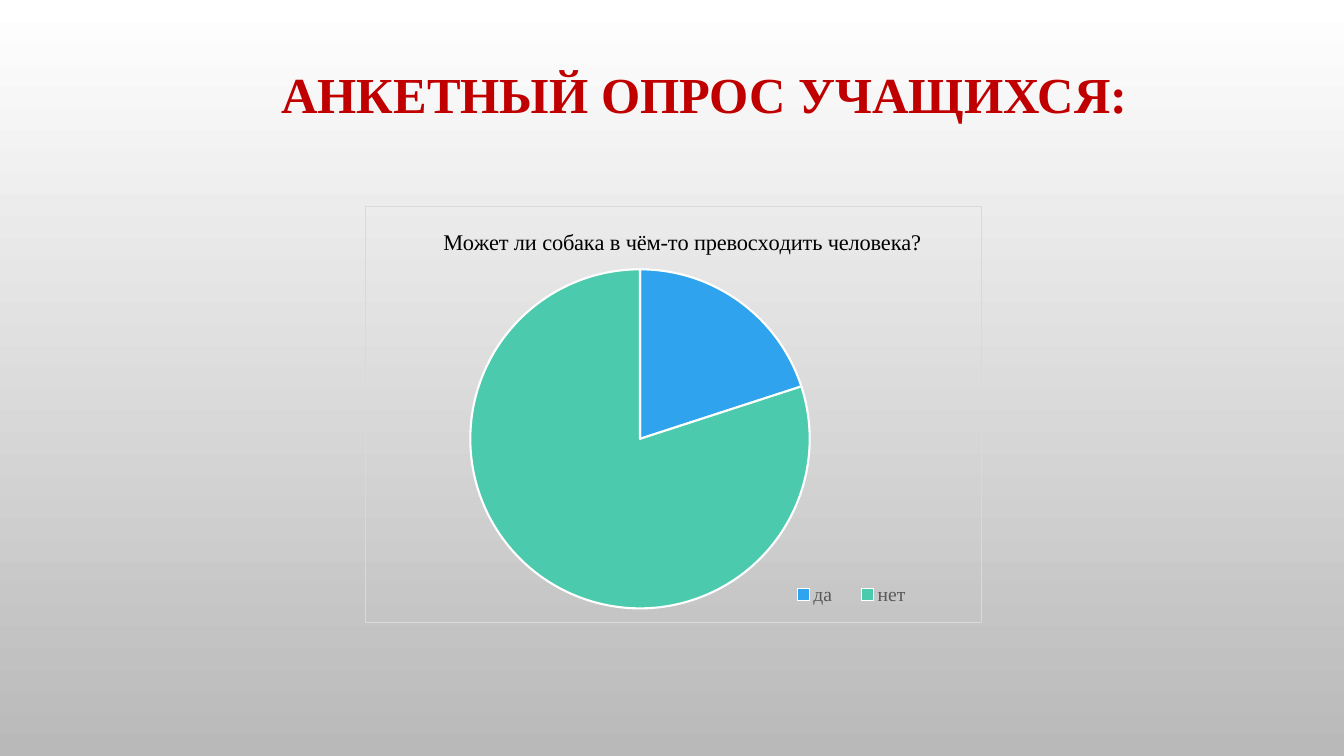
"""Build a survey slide with a heading and a pie chart of the answers."""
from lxml import etree
from pptx import Presentation
from pptx.chart.data import CategoryChartData
from pptx.dml.color import RGBColor
from pptx.enum.chart import XL_CHART_TYPE, XL_LEGEND_POSITION
from pptx.enum.text import MSO_ANCHOR, PP_ALIGN
from pptx.oxml import parse_xml
from pptx.oxml.ns import nsdecls, qn
from pptx.util import Pt

PIE = XL_CHART_TYPE.PIE
LEGEND_RIGHT = XL_LEGEND_POSITION.RIGHT
MIDDLE = MSO_ANCHOR.MIDDLE
CENTER = PP_ALIGN.CENTER

HEADING = "АНКЕТНЫЙ ОПРОС УЧАЩИХСЯ: "
QUESTION = "Может ли собака в чём-то превосходить человека?"
ANSWERS = {"да": 20, "нет": 80}

SLIDE_SIZE = (1344, 756)
HEADING_BOX = (140, 10, 1142, 175)
CHART_BOX = (365, 206, 617, 417)
QUESTION_SPOT = (439, 223)
PIE_BOX = (470, 269, 340, 340)
LEGEND_BOX = (775, 580, 154, 30)

THEME = {
    "font": "Times New Roman",
    "base_font": "Calibri",
    "background": ("FFFFFF", "B9B9B9"),
    "heading": (36, "C00000"),
    "question": (16, "000000"),
    "legend": (14, "595959"),
    "base": (10, "000000"),
    "slices": ("2FA3EE", "4BCAAD"),
    "slice_edge": (1.5, "FFFFFF"),
    "frame": (0.75, "D9D9D9"),
}


def emu(px):
    return round(px * 914400 / 100.8)


def rgb(value):
    return RGBColor.from_string(value)


def style_font(font, role, bold=False, face=THEME["font"]):
    size, color = THEME[role]
    font.name = face
    font.size = Pt(size)
    font.bold = bold
    font.color.rgb = rgb(color)


def place_in_chart(part, index, box, inner=False):
    """Give a chart part a manual layout, as shares of the chart box."""
    for old in part.findall(qn("c:layout")):
        part.remove(old)
    layout = parse_xml(f"<c:layout {nsdecls('c')}><c:manualLayout/></c:layout>")
    manual = layout[0]
    left, top, width, height = CHART_BOX
    shares = [(box[0] - left) / width, (box[1] - top) / height]
    shares += [length / whole for length, whole in zip(box[2:], (width, height))]
    settings = [("layoutTarget", "inner")] if inner else []
    settings += [("xMode", "edge"), ("yMode", "edge")]
    settings += [(key, f"{share:.4f}") for key, share in zip("xywh", shares)]
    for tag, value in settings:
        etree.SubElement(manual, qn(f"c:{tag}")).set("val", value)
    part.insert(index, layout)


def add_background(slide):
    fill = slide.background.fill
    fill.gradient()
    fill.gradient_angle = 270
    for stop, color in zip(fill.gradient_stops, THEME["background"]):
        stop.color.rgb = rgb(color)


def add_heading(slide):
    frame = slide.shapes.add_textbox(*map(emu, HEADING_BOX)).text_frame
    frame.word_wrap = True
    frame.vertical_anchor = MIDDLE
    frame.text = HEADING
    paragraph = frame.paragraphs[0]
    paragraph.alignment = CENTER
    paragraph.line_spacing = 0.9
    style_font(paragraph.runs[0].font, "heading", bold=True)


def add_survey_chart(slide):
    data = CategoryChartData()
    data.categories = list(ANSWERS)
    data.add_series("Series 1", list(ANSWERS.values()))
    chart = slide.shapes.add_chart(PIE, *map(emu, CHART_BOX), data).chart
    style_font(chart.font, "base", face=THEME["base_font"])

    chart.has_title = True
    question = chart.chart_title.text_frame
    question.text = QUESTION
    style_font(question.paragraphs[0].runs[0].font, "question")

    chart.has_legend = True
    chart.legend.position = LEGEND_RIGHT
    chart.legend.include_in_layout = False
    style_font(chart.legend.font, "legend")

    plot = chart.plots[0]
    plot.vary_by_categories = True
    edge_width, edge_color = THEME["slice_edge"]
    for index, color in enumerate(THEME["slices"]):
        look = plot.series[0].points[index].format
        look.fill.solid()
        look.fill.fore_color.rgb = rgb(color)
        look.line.color.rgb = rgb(edge_color)
        look.line.width = Pt(edge_width)

    body = chart.element.find(qn("c:chart"))
    place_in_chart(body.find(qn("c:title")), 1, QUESTION_SPOT)
    place_in_chart(body.find(qn("c:plotArea")), 0, PIE_BOX, inner=True)
    place_in_chart(body.find(qn("c:legend")), 1, LEGEND_BOX)
    frame_width, frame_color = THEME["frame"]
    body.addnext(parse_xml(
        f"<c:spPr {nsdecls('c', 'a')}><a:noFill/>"
        f'<a:ln w="{Pt(frame_width)}"><a:solidFill><a:srgbClr val="{frame_color}"/>'
        "</a:solidFill></a:ln></c:spPr>"
    ))


def main():
    deck = Presentation()
    deck.slide_width, deck.slide_height = map(emu, SLIDE_SIZE)
    slide = deck.slides.add_slide(deck.slide_layouts[6])
    add_background(slide)
    add_heading(slide)
    add_survey_chart(slide)
    deck.save("out.pptx")


if __name__ == "__main__":
    main()
